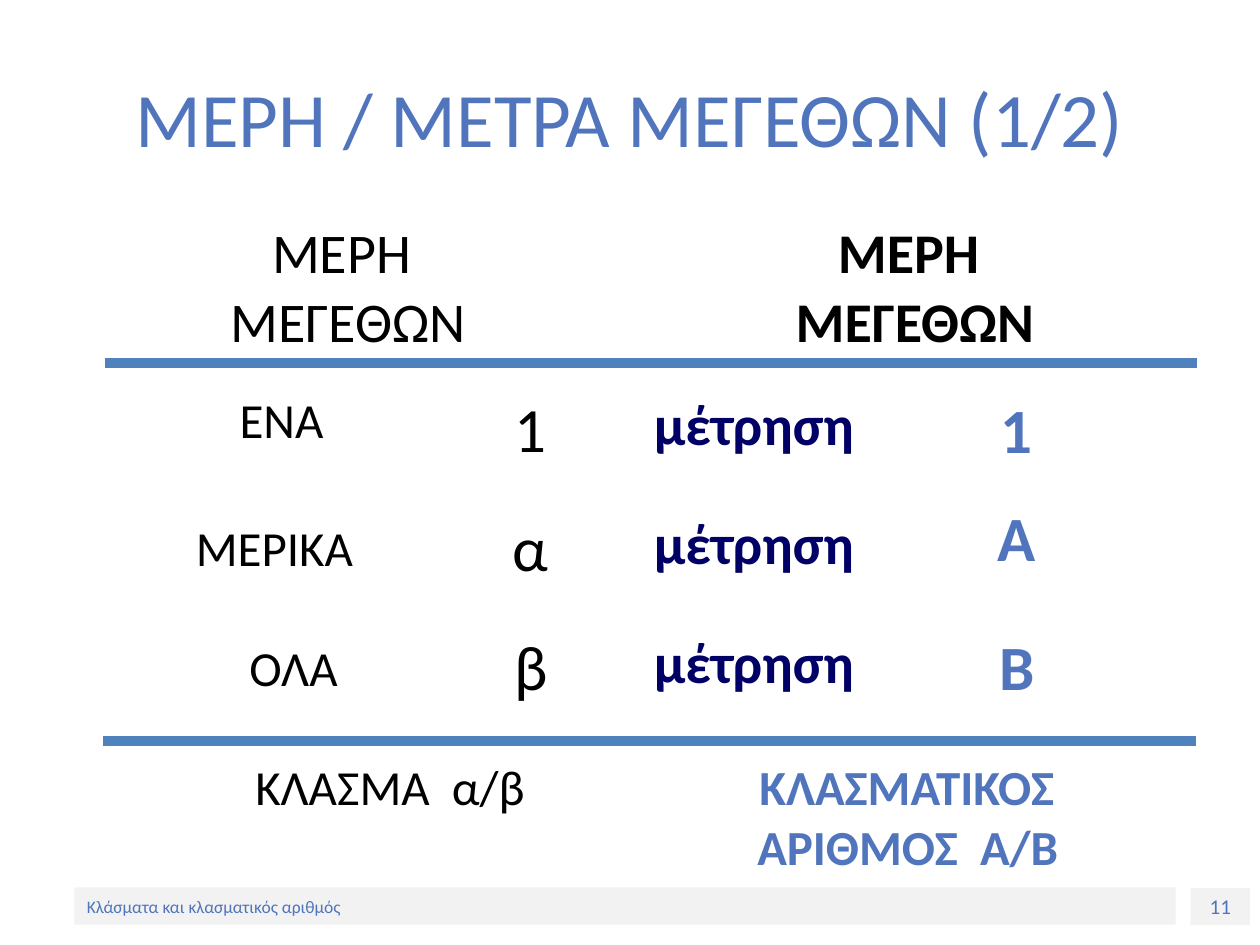
import pptx
import pptx.util
import pptx.dml.color
import pptx.enum.shapes
import pptx.enum.text
import pptx.oxml.ns
import lxml.etree

Cm = pptx.util.Cm
Pt = pptx.util.Pt
Align = pptx.enum.text.PP_ALIGN
Anchor = pptx.enum.text.MSO_ANCHOR
qn = pptx.oxml.ns.qn
RGB = pptx.dml.color.RGBColor.from_string
COLOR = {"text": "000000", "blue": "5075BC", "navy": "000066",
         "rule": "4F81BD", "bar": "F2F2F2"}


def write(para, text, size=28, color="text", bold=False, align=Align.CENTER):
    para.alignment = align
    # Tab stops sit one inch apart
    if "\t" in text:
        tabs = lxml.etree.SubElement(para._p.get_or_add_pPr(), qn("a:tabLst"))
        for stop in range(1, 5):
            lxml.etree.SubElement(tabs, qn("a:tab"), pos=str(Cm(2.54 * stop)), algn="l")
    run = para.add_run()
    run.text = text
    run.font.name = "Calibri"
    run.font.size = Pt(size)
    run.font.bold = bold
    run.font.color.rgb = RGB(COLOR[color])


def put(text, left, top, width, height, fill=None, anchor=Anchor.TOP, **form):
    box = (Cm(left), Cm(top), Cm(width), Cm(height))
    if fill:
        shape = slide.shapes.add_shape(pptx.enum.shapes.MSO_SHAPE.RECTANGLE, *box)
        shape.shadow.inherit = False
        shape.fill.solid()
        shape.fill.fore_color.rgb = RGB(COLOR[fill])
        shape.line.fill.background()
    else:
        shape = slide.shapes.add_textbox(*box)
    frame = shape.text_frame
    frame.word_wrap = True
    frame.vertical_anchor = anchor
    write(frame.paragraphs[0], text, **form)
    return frame.paragraphs[0]


deck = pptx.Presentation()
deck.slide_width, deck.slide_height = Cm(25.4), Cm(19.05)
slide = deck.slides.add_slide(deck.slide_layouts[6])

# Footer and page number
put("11", 24, 17.9, 1.2, 0.75, fill="bar", anchor=Anchor.MIDDLE, size=12, color="blue")
put("Κλάσματα και κλασματικός αριθμός", 1.5, 17.89, 22.2, 0.75, fill="bar",
    anchor=Anchor.MIDDLE, size=10, color="blue", align=Align.LEFT)

# Title
put("ΜΕΡΗ / ΜΕΤΡΑ ΜΕΓΕΘΩΝ (1/2)", 1.27, 0.76, 22.86, 3.18,
    anchor=Anchor.MIDDLE, size=44, color="blue")

# Column heads
grid = slide.shapes.add_table(1, 2, Cm(1.3), Cm(4.32), Cm(22.86), Cm(1.04))
for col, bold in enumerate((False, True)):
    cell = grid.table.cell(0, col)
    cell.fill.background()
    cell.vertical_anchor = Anchor.TOP
    frame = cell.text_frame
    write(frame.paragraphs[0], "ΜΕΡΗ ", size=32, bold=bold)
    write(frame.add_paragraph(), "ΜΕΓΕΘΩΝ", size=32, bold=bold)

# Rows: word, part, measuring, number
rows = [("ΕΝΑ \t", 3.7, 7.72, "1", "1", 7.75),
        ("ΜΕΡΙΚΑ \t", 3.7, 10.31, "α", "Α", 9.93),
        ("ΟΛΑ \t", 3.9, 12.73, "β", "Β", 12.52)]
for i, (word, left, top, part, num, high) in enumerate(rows):
    y = 7.73 + 2.4 * i
    put(word, left, top, 4.8, 1.45)
    put(part, 9.7, y, 2, 1.78, size=36)
    put("μέτρηση", 12.7, y, 5, 1.6, size=32, color="navy", bold=True)
    put(num, 19.5, high, 2, 1.8, size=36, color="blue", bold=True)

# Rules above and below the rows
for left, y in ((2.11, 7.32), (2.08, 14.94)):
    rule = slide.shapes.add_connector(pptx.enum.shapes.MSO_CONNECTOR.STRAIGHT,
                                      Cm(left), Cm(y), Cm(left + 22.02), Cm(y))
    rule.line.color.rgb = RGB(COLOR["rule"])
    rule.line.width = Pt(6)
    lxml.etree.SubElement(rule._element.spPr, qn("a:effectLst"))

# Result
last = put("ΚΛΑΣΜΑ  α/β\t\t", 1, 15.12, 24.4, 1.45)
write(last, "ΚΛΑΣΜΑΤΙΚΟΣ", color="blue", bold=True)
put("ΑΡΙΘΜΟΣ  Α/Β", 12.3, 16.33, 12, 1.45, color="blue", bold=True)

deck.save("out.pptx")
